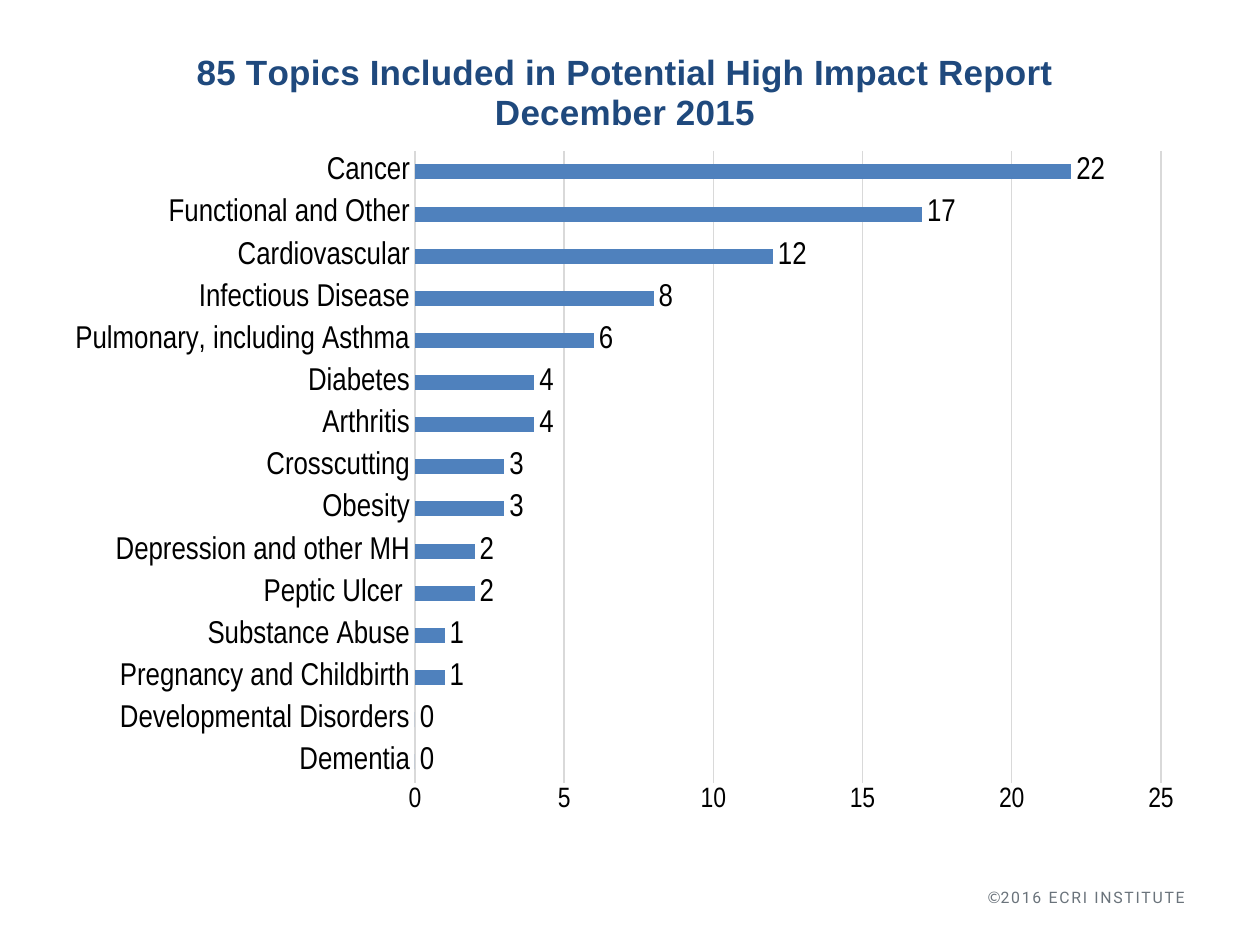
from dataclasses import dataclass

import lxml.etree
import pptx
import pptx.chart.data
import pptx.dml.color
import pptx.enum.chart
import pptx.enum.text
import pptx.oxml.ns
import pptx.util

PX_PER_INCH = 126
EMU_PER_PX = 914400 / PX_PER_INCH
GRID_COLOR = "D9D9D9"
TOPICS = {
    "Dementia": 0,
    "Developmental Disorders": 0,
    "Pregnancy and Childbirth": 1,
    "Substance Abuse": 1,
    "Peptic Ulcer ": 2,
    "Depression and other MH": 2,
    "Obesity": 3,
    "Crosscutting": 3,
    "Arthritis": 4,
    "Diabetes": 4,
    "Pulmonary, including Asthma": 6,
    "Infectious Disease": 8,
    "Cardiovascular": 12,
    "Functional and Other": 17,
    "Cancer": 22,
}


@dataclass(frozen=True)
class Box:
    left: int
    top: int
    width: int
    height: int

    def emu(self) -> tuple:
        return tuple(px(value) for value in (self.left, self.top, self.width, self.height))


@dataclass(frozen=True)
class TextStyle:
    name: str
    size: int
    color: str = "000000"
    bold: bool = False


CHART_BOX = Box(53, 21, 1144, 809)
PLOT_BOX = Box(415, 151, 746, 632)
FOOTER_BOX = Box(892, 882, 305, 32)
AXIS_STYLE = TextStyle("Arial Narrow", 16)
LABEL_STYLE = TextStyle("Arial Narrow", 18)
TITLE_STYLE = TextStyle("Arial", 20, "1F497D", True)


def px(value: int) -> pptx.util.Emu:
    return pptx.util.Emu(round(value * EMU_PER_PX))


def rgb(color: str) -> pptx.dml.color.RGBColor:
    return pptx.dml.color.RGBColor.from_string(color)


def style_font(font, style: TextStyle) -> None:
    font.name = style.name
    font.size = pptx.util.Pt(style.size)
    font.bold = style.bold
    font.color.rgb = rgb(style.color)


def style_line(line) -> None:
    line.color.rgb = rgb(GRID_COLOR)
    line.width = pptx.util.Pt(0.75)


def place_plot(chart) -> None:
    """Fix the inner plot area as fractions of the chart."""
    qn = pptx.oxml.ns.qn
    plot_area = chart._chartSpace.find(".//" + qn("c:plotArea"))
    for old_layout in plot_area.findall(qn("c:layout")):
        plot_area.remove(old_layout)
    layout = lxml.etree.Element(qn("c:layout"))
    manual = lxml.etree.SubElement(layout, qn("c:manualLayout"))
    settings = {
        "layoutTarget": "inner",
        "xMode": "edge",
        "yMode": "edge",
        "x": (PLOT_BOX.left - CHART_BOX.left) / CHART_BOX.width,
        "y": (PLOT_BOX.top - CHART_BOX.top) / CHART_BOX.height,
        "w": PLOT_BOX.width / CHART_BOX.width,
        "h": PLOT_BOX.height / CHART_BOX.height,
    }
    for name, value in settings.items():
        lxml.etree.SubElement(manual, qn("c:" + name)).set("val", str(value))
    plot_area.insert(0, layout)


def add_topic_chart(slide) -> None:
    data = pptx.chart.data.CategoryChartData()
    data.categories = list(TOPICS)
    data.add_series("Series 1", list(TOPICS.values()))
    chart = slide.shapes.add_chart(
        pptx.enum.chart.XL_CHART_TYPE.BAR_CLUSTERED, *CHART_BOX.emu(), data
    ).chart
    style_font(chart.font, TextStyle("Calibri", 10))
    chart.has_legend = False
    place_plot(chart)

    chart.has_title = True
    chart.chart_title.include_in_layout = False
    run = chart.chart_title.text_frame.paragraphs[0].add_run()
    run.text = "85 Topics Included in Potential High Impact Report December 2015"
    style_font(run.font, TITLE_STYLE)

    category_axis, value_axis = chart.category_axis, chart.value_axis
    for axis, style in ((category_axis, LABEL_STYLE), (value_axis, AXIS_STYLE)):
        axis.major_tick_mark = pptx.enum.chart.XL_TICK_MARK.NONE
        axis.minor_tick_mark = pptx.enum.chart.XL_TICK_MARK.NONE
        style_font(axis.tick_labels.font, style)
    category_axis.has_major_gridlines = False
    style_line(category_axis.format.line)
    value_axis.minimum_scale, value_axis.maximum_scale = 0, 25
    value_axis.major_unit = 5
    value_axis.has_major_gridlines = True
    style_line(value_axis.major_gridlines.format.line)
    value_axis.format.line.fill.background()

    plot = chart.plots[0]
    plot.gap_width = 182
    plot.vary_by_categories = False
    series = plot.series[0]
    series.format.fill.solid()
    series.format.fill.fore_color.rgb = rgb("4F81BD")
    labels = series.data_labels
    labels.show_value = True
    labels.position = pptx.enum.chart.XL_LABEL_POSITION.OUTSIDE_END
    style_font(labels.font, LABEL_STYLE)


def add_footer(slide) -> None:
    text_frame = slide.shapes.add_textbox(*FOOTER_BOX.emu()).text_frame
    text_frame.word_wrap = True
    paragraph = text_frame.paragraphs[0]
    paragraph.alignment = pptx.enum.text.PP_ALIGN.RIGHT
    for text, name in (("©", "Lato"), ("2016 ECRI INSTITUTE", "Roboto")):
        run = paragraph.add_run()
        run.text = text
        style_font(run.font, TextStyle(name, 9, "6A737B"))
    run.font._element.set("spc", "100")


def main() -> None:
    presentation = pptx.Presentation()
    presentation.slide_width = px(10 * PX_PER_INCH)
    presentation.slide_height = px(945)
    slide = presentation.slides.add_slide(presentation.slide_layouts[6])
    add_footer(slide)
    add_topic_chart(slide)
    presentation.save("out.pptx")


if __name__ == "__main__":
    main()
